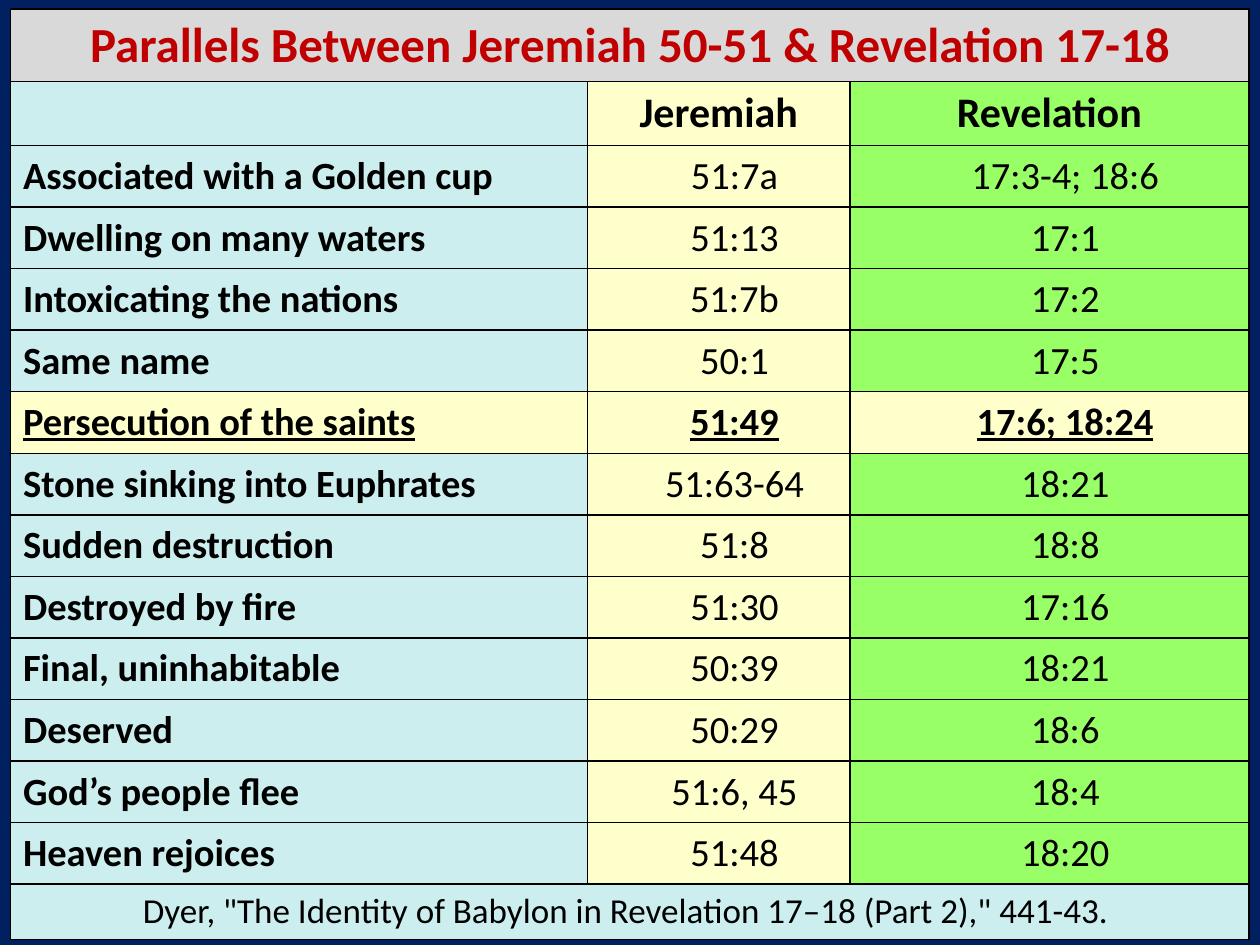
from dataclasses import dataclass

from lxml.etree import SubElement
from pptx import Presentation
from pptx.dml.color import RGBColor
from pptx.enum.text import MSO_ANCHOR as Anchor, PP_ALIGN as Align
from pptx.oxml.ns import qn
from pptx.table import _Cell as Cell
from pptx.util import Pt

NAVY, GREY, RED, BLACK = "002060", "D9D9D9", "C00000", "000000"
AQUA, CREAM, GREEN = "CCEEEE", "FFFFCC", "99FF66"
COLUMN_FILLS = (AQUA, CREAM, GREEN)
COLUMN_WIDTHS = (329.8, 149.8, 228.2)
TITLE_HEIGHT, ROW_HEIGHT, CITATION_HEIGHT = 39.6, 35.2, 30.2
REFERENCE_INDENT = 18


@dataclass(frozen=True)
class Parallel:
    theme: str
    jeremiah: str
    revelation: str
    highlighted: bool = False


PARALLELS = (
    Parallel("Associated with a Golden cup", "51:7a", "17:3-4; 18:6"),
    Parallel("Dwelling on many waters", "51:13", "17:1"),
    Parallel("Intoxicating the nations", "51:7b", "17:2"),
    Parallel("Same name", "50:1", "17:5"),
    Parallel("Persecution of the saints", "51:49", "17:6; 18:24", True),
    Parallel("Stone sinking into Euphrates", "51:63-64", "18:21"),
    Parallel("Sudden destruction", "51:8", "18:8"),
    Parallel("Destroyed by fire", "51:30", "17:16"),
    Parallel("Final, uninhabitable", "50:39", "18:21"),
    Parallel("Deserved", "50:29", "18:6"),
    Parallel("God’s people flee", "51:6, 45", "18:4"),
    Parallel("Heaven rejoices", "51:48", "18:20"),
)


def rgb(code: str) -> RGBColor:
    return RGBColor.from_string(code)


def paint(cell: Cell, fill: str) -> None:
    properties = cell._tc.get_or_add_tcPr()
    for side in ("lnL", "lnR", "lnT", "lnB"):
        border = SubElement(properties, qn(f"a:{side}"), w=str(Pt(1)))
        SubElement(SubElement(border, qn("a:solidFill")), qn("a:srgbClr"), val=BLACK)
    cell.fill.solid()
    cell.fill.fore_color.rgb = rgb(fill)
    cell.vertical_anchor = Anchor.MIDDLE


def write(cell: Cell, text: str, *, size: float = 22, color: str = BLACK, bold: bool = False,
          underline: bool = False, align: Align = Align.CENTER, indent: float = 0) -> None:
    paragraph = cell.text_frame.paragraphs[0]
    paragraph.alignment = align
    if indent:
        paragraph._p.get_or_add_pPr().set("marL", str(Pt(indent)))
        paragraph._p.get_or_add_pPr().set("indent", "0")
    run = paragraph.add_run()
    run.text = text
    font = run.font
    font.name, font.size, font.bold, font.underline = "Calibri", Pt(size), bold, underline
    font.color.rgb = rgb(color)


def write_parallel(cells: list[Cell], parallel: Parallel) -> None:
    marked = parallel.highlighted
    for cell, fill in zip(cells, COLUMN_FILLS):
        paint(cell, CREAM if marked else fill)
    theme, *references = cells
    write(theme, parallel.theme, bold=True, underline=marked, align=Align.LEFT)
    for cell, verses in zip(references, (parallel.jeremiah, parallel.revelation)):
        write(cell, verses, bold=marked, underline=marked, indent=REFERENCE_INDENT)


def span_row(cells: list[Cell], fill: str) -> Cell:
    for cell in cells:
        paint(cell, fill)
    cells[0].merge(cells[-1])
    return cells[0]


def main() -> None:
    deck = Presentation()
    deck.slide_width, deck.slide_height = Pt(720), Pt(540)
    slide = deck.slides.add_slide(deck.slide_layouts[6])
    slide.background.fill.solid()
    slide.background.fill.fore_color.rgb = rgb(NAVY)

    heights = [TITLE_HEIGHT] + [ROW_HEIGHT] * (len(PARALLELS) + 1) + [CITATION_HEIGHT]
    comparison = slide.shapes.add_table(
        len(heights), len(COLUMN_WIDTHS), Pt(6), Pt(5.2),
        Pt(sum(COLUMN_WIDTHS)), Pt(sum(heights))).table
    comparison.first_row = comparison.horz_banding = False
    for column, width in zip(comparison.columns, COLUMN_WIDTHS):
        column.width = Pt(width)
    for row, height in zip(comparison.rows, heights):
        row.height = Pt(height)

    title, headings, *body, citation = [list(row.cells) for row in comparison.rows]
    write(span_row(title, GREY), "Parallels Between Jeremiah 50-51 & Revelation 17-18",
          size=28, color=RED, bold=True)
    for cell, fill in zip(headings, COLUMN_FILLS):
        paint(cell, fill)
    for cell, book in zip(headings[1:], ("Jeremiah", "Revelation")):
        write(cell, book, size=24, bold=True)
    for cells, parallel in zip(body, PARALLELS):
        write_parallel(cells, parallel)
    write(span_row(citation, AQUA),
          'Dyer, "The Identity of Babylon in Revelation 17–18 (Part 2)," 441-43. ', size=20)

    deck.save("out.pptx")


if __name__ == "__main__":
    main()
